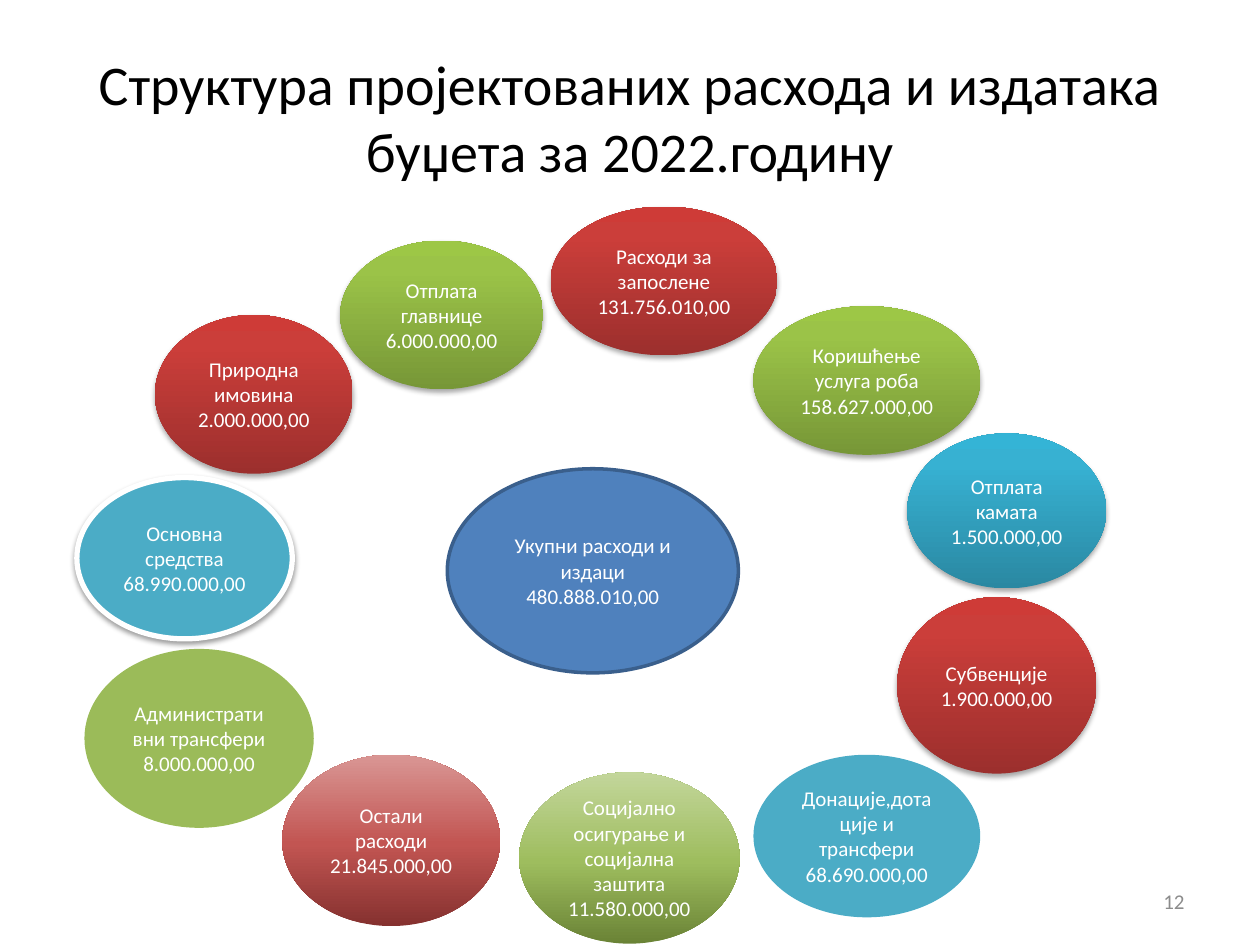
import pptx
import pptx.util
import pptx.dml.color
import pptx.enum.shapes
import pptx.enum.text
import pptx.oxml
import pptx.oxml.ns
import lxml.etree

Inches = pptx.util.Inches
Pt = pptx.util.Pt
RGBColor = pptx.dml.color.RGBColor
PP_ALIGN = pptx.enum.text.PP_ALIGN
MIDDLE = pptx.enum.text.MSO_ANCHOR.MIDDLE
qn = pptx.oxml.ns.qn

FONT = "Calibri"
BLACK = RGBColor(0x00, 0x00, 0x00)
WHITE = RGBColor(0xFF, 0xFF, 0xFF)
GRAY = RGBColor(0x8C, 0x8C, 0x8C)
BLUE = RGBColor(0x4F, 0x81, 0xBD)
NAVY = RGBColor(0x3A, 0x5F, 0x8C)
TEAL = RGBColor(0x4B, 0xAC, 0xC6)
GREEN = RGBColor(0x9B, 0xBB, 0x59)


def stops(middle, *colors):
    return list(zip((0, middle, 100), map(RGBColor.from_string, colors)))


RED_GLOSS = stops(80, "9C2F2D", "CB3E3A", "CE3B37")
GREEN_GLOSS = stops(80, "779737", "9BC348", "9DC746")
TEAL_GLOSS = stops(80, "2A88A2", "37B1D2", "34B4D6")
RED_FADE = stops(48, "85312F", "C25552", "D99694")
GREEN_FADE = stops(48, "6A8336", "9EBD5E", "C3D69B")

TOTAL = ((3.55, 3.72, 2.31, 1.62), ["Укупни расходи и издаци", "480.888.010,00"])

EXPENSES = [
    ((2.7, 1.91, 1.61, 1.18), ["Отплата главнице", "6.000.000,00"], GREEN_GLOSS, 35),
    ((4.37, 1.64, 1.8, 1.18), ["Расходи за запослене", "131.756.010,00"], RED_GLOSS, 35),
    ((5.98, 2.43, 1.8, 1.18), ["Коришћење услуга роба", "158.627.000,00"], GREEN_GLOSS, 35),
    ((7.2, 3.44, 1.58, 1.23), ["Отплата камата", "1.500.000,00"], TEAL_GLOSS, 35),
    ((7.12, 4.74, 1.58, 1.4), ["Субвенције 1.900.000,00"], RED_GLOSS, 35),
    ((5.98, 5.99, 1.8, 1.29), ["Донације,дотације и трансфери", "68.690.000,00"], TEAL, 0),
    ((4.12, 6.13, 1.75, 1.36),
     ["Социјално осигурање и социјална заштита", "11.580.000,00"], GREEN_FADE, 0),
    ((2.24, 5.99, 1.73, 1.36), ["Остали расходи", "21.845.000,00"], RED_FADE, 0),
    ((0.67, 5.15, 1.82, 1.42), ["Административни трансфери", "8.000.000,00"], GREEN, 0),
    ((0.61, 3.79, 1.71, 1.28), ["Основна средства", "68.990.000,00"], TEAL, 38),
    ((1.23, 2.5, 1.57, 1.26), ["Природна имовина", "2.000.000,00"], RED_GLOSS, 35),
]


def write(tf, lines, size, color, align):
    tf.word_wrap = True
    tf.vertical_anchor = MIDDLE
    for i, line in enumerate(lines):
        p = tf.paragraphs[0] if i == 0 else tf.add_paragraph()
        p.text = line
        p.alignment = align
        p.font.name = FONT
        p.font.size = Pt(size)
        p.font.color.rgb = color


def fill_gradient(sp, gradient):
    sp.fill.gradient()
    sp.fill.gradient_angle = 90
    gs_list = sp._element.spPr.find(".//" + qn("a:gsLst"))
    for gs in list(gs_list):
        gs_list.remove(gs)
    for pos, color in gradient:
        gs = lxml.etree.SubElement(gs_list, qn("a:gs"), pos=str(pos * 1000))
        lxml.etree.SubElement(gs, qn("a:srgbClr"), val=str(color))


def add_shadow(sp, opacity):
    effects = sp._element.spPr.find(qn("a:effectLst"))
    shadow = lxml.etree.SubElement(
        effects, qn("a:outerShdw"), blurRad=str(Pt(3.1)), dist=str(Pt(1.8)),
        dir="5400000", rotWithShape="0")
    color = lxml.etree.SubElement(shadow, qn("a:srgbClr"), val=str(BLACK))
    lxml.etree.SubElement(color, qn("a:alpha"), val=str(opacity * 1000))


def add_bubble(s, box, lines, fill, opacity=0, outline=None, width=0):
    sp = s.shapes.add_shape(pptx.enum.shapes.MSO_SHAPE.OVAL, *map(Inches, box))
    if isinstance(fill, list):
        fill_gradient(sp, fill)
    else:
        sp.fill.solid()
        sp.fill.fore_color.rgb = fill
    if outline is None:
        sp.line.fill.background()
    else:
        sp.line.color.rgb = outline
        sp.line.width = Pt(width)
    sp.shadow.inherit = False
    if opacity:
        add_shadow(sp, opacity)
    write(sp.text_frame, lines, 12, WHITE, PP_ALIGN.CENTER)


def add_title(s, box, text):
    title = s.shapes.title
    title.left, title.top, title.width, title.height = map(Inches, box)
    write(title.text_frame, [text], 32, BLACK, PP_ALIGN.CENTER)
    title.text_frame.auto_size = pptx.enum.text.MSO_AUTO_SIZE.NONE


def add_page_number(s, box, number):
    sp = s.shapes.add_textbox(*map(Inches, box))
    write(sp.text_frame, [number], 12, GRAY, PP_ALIGN.RIGHT)


def add_expense_ring(s):
    add_bubble(s, *TOTAL, BLUE, outline=NAVY, width=2)
    for box, lines, fill, opacity in EXPENSES:
        ringed = fill == TEAL and opacity
        add_bubble(s, box, lines, fill, opacity, WHITE if ringed else None, 3)


def main():
    prs = pptx.Presentation()
    prs.slide_width, prs.slide_height = Inches(10), Inches(7.5)
    s = prs.slides.add_slide(prs.slide_layouts[5])
    add_title(s, (0.5, 0.3, 9, 1.25),
              "Структура пројектованих расхода и издатака буџета за 2022.годину")
    add_page_number(s, (7.17, 6.95, 2.33, 0.4), "12")
    add_expense_ring(s)
    prs.save("out.pptx")


if __name__ == "__main__":
    main()
